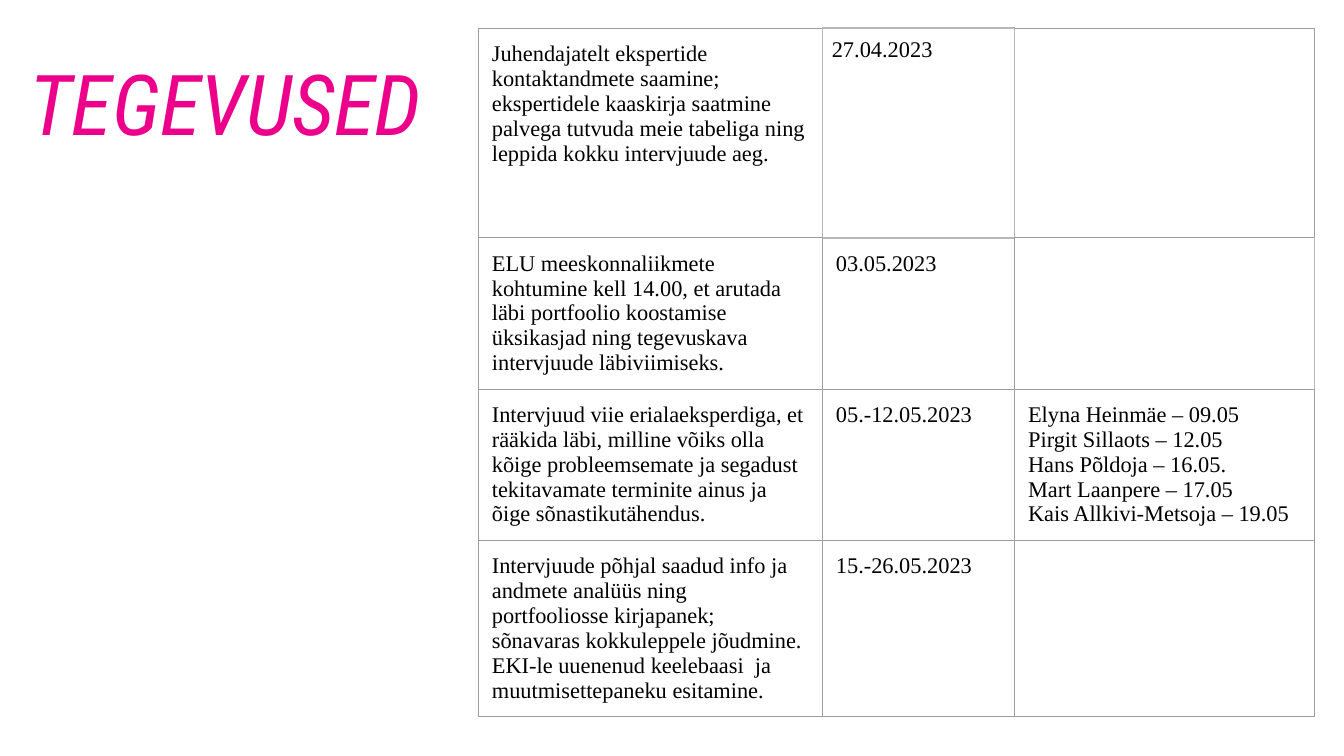
from dataclasses import dataclass

from lxml.etree import SubElement
from pptx import Presentation
from pptx.dml.color import RGBColor
from pptx.enum.text import MSO_ANCHOR, MSO_AUTO_SIZE, PP_ALIGN
from pptx.oxml.ns import qn
from pptx.util import Inches, Pt

PINK = RGBColor(0xEC, 0x00, 0x8B)
BLACK = RGBColor(0x00, 0x00, 0x00)
GREY = RGBColor(0x9E, 0x9E, 0x9E)
LIGHT_GREY = RGBColor(0xB7, 0xB7, 0xB7)

SIDES = "LRTB"
COLUMN_WIDTHS = (2.56, 1.43, 2.23)
# Sides drawn in the lighter, thicker line, by (row, column)
LIGHT_SIDES = {(0, 0): "R", (0, 1): SIDES, (0, 2): "L", (1, 1): "T", (1, 2): "R"}


@dataclass(frozen=True)
class Activity:
    height: float
    task: str
    date: str
    experts: str = ""
    date_margin: float = 0.1


ACTIVITIES = (
    Activity(
        1.56,
        "Juhendajatelt ekspertide kontaktandmete saamine; ekspertidele kaaskirja "
        "saatmine palvega tutvuda meie tabeliga ning leppida kokku intervjuude aeg.",
        "27.04.2023",
        date_margin=0.07,
    ),
    Activity(
        1.12,
        "ELU meeskonnaliikmete kohtumine kell 14.00, et arutada läbi portfoolio "
        "koostamise üksikasjad ning tegevuskava intervjuude läbiviimiseks.",
        "03.05.2023",
    ),
    Activity(
        1.12,
        "Intervjuud viie erialaeksperdiga, et rääkida läbi, milline võiks olla  "
        "kõige probleemsemate ja segadust tekitavamate terminite ainus ja "
        "õige sõnastikutähendus.",
        "05.-12.05.2023",
        "Elyna Heinmäe – 09.05\nPirgit Sillaots – 12.05\nHans Põldoja – 16.05.\n"
        "Mart Laanpere – 17.05\nKais Allkivi-Metsoja – 19.05",
    ),
    Activity(
        1.31,
        "Intervjuude põhjal saadud info ja andmete analüüs ning portfooliosse "
        "kirjapanek; sõnavaras kokkuleppele jõudmine. EKI-le uuenenud keelebaasi  ja "
        "muutmisettepaneku esitamine.",
        "15.-26.05.2023",
    ),
)


def draw_borders(cell, light_sides: str) -> None:
    properties = cell._tc.get_or_add_tcPr()
    for side in SIDES:
        light = side in light_sides
        width = Pt(1) if light else Pt(0.75)
        line = SubElement(properties, qn(f"a:ln{side}"), w=str(width))
        fill = SubElement(line, qn("a:solidFill"))
        SubElement(fill, qn("a:srgbClr"), val=str(LIGHT_GREY if light else GREY))


def fill_cell(cell, text: str, margin: float, light_sides: str) -> None:
    cell.margin_left = cell.margin_right = Inches(margin)
    cell.margin_top = cell.margin_bottom = Inches(margin)
    cell.vertical_anchor = MSO_ANCHOR.TOP
    cell.text = text
    for para in cell.text_frame.paragraphs:
        para.font.name = "Times New Roman"
        para.font.size = Pt(12)
        para.font.color.rgb = BLACK
    draw_borders(cell, light_sides)
    cell.fill.background()


def add_title(page, text: str) -> None:
    title = page.shapes.title
    title.left, title.top = Inches(0.12), Inches(0.14)
    title.width, title.height = Inches(4.88), Inches(1.04)
    frame = title.text_frame
    frame.text = text
    frame.auto_size = MSO_AUTO_SIZE.NONE
    frame.vertical_anchor = MSO_ANCHOR.BOTTOM
    para = frame.paragraphs[0]
    para.alignment = PP_ALIGN.LEFT
    para.font.name = "Roboto Condensed"
    para.font.size = Pt(45)
    para.font.italic = True
    para.font.color.rgb = PINK


def add_schedule(page, activities: tuple[Activity, ...]) -> None:
    height = sum(activity.height for activity in activities)
    table = page.shapes.add_table(
        len(activities), len(COLUMN_WIDTHS), Inches(3.56), Inches(0.21),
        Inches(sum(COLUMN_WIDTHS)), Inches(height),
    ).table
    table.first_row = table.horz_banding = False
    for column, width in zip(table.columns, COLUMN_WIDTHS):
        column.width = Inches(width)
    for i, activity in enumerate(activities):
        table.rows[i].height = Inches(activity.height)
        texts = (activity.task, activity.date, activity.experts)
        margins = (0.1, activity.date_margin, 0.1)
        for j, (text, margin) in enumerate(zip(texts, margins)):
            fill_cell(table.cell(i, j), text, margin, LIGHT_SIDES.get((i, j), ""))


def main() -> None:
    deck = Presentation()
    # Widescreen, 16:9
    deck.slide_width = Inches(10)
    deck.slide_height = deck.slide_width * 9 // 16
    # Title Only layout
    page = deck.slides.add_slide(deck.slide_layouts[5])
    add_title(page, "TEGEVUSED")
    add_schedule(page, ACTIVITIES)
    deck.save("out.pptx")


if __name__ == "__main__":
    main()
